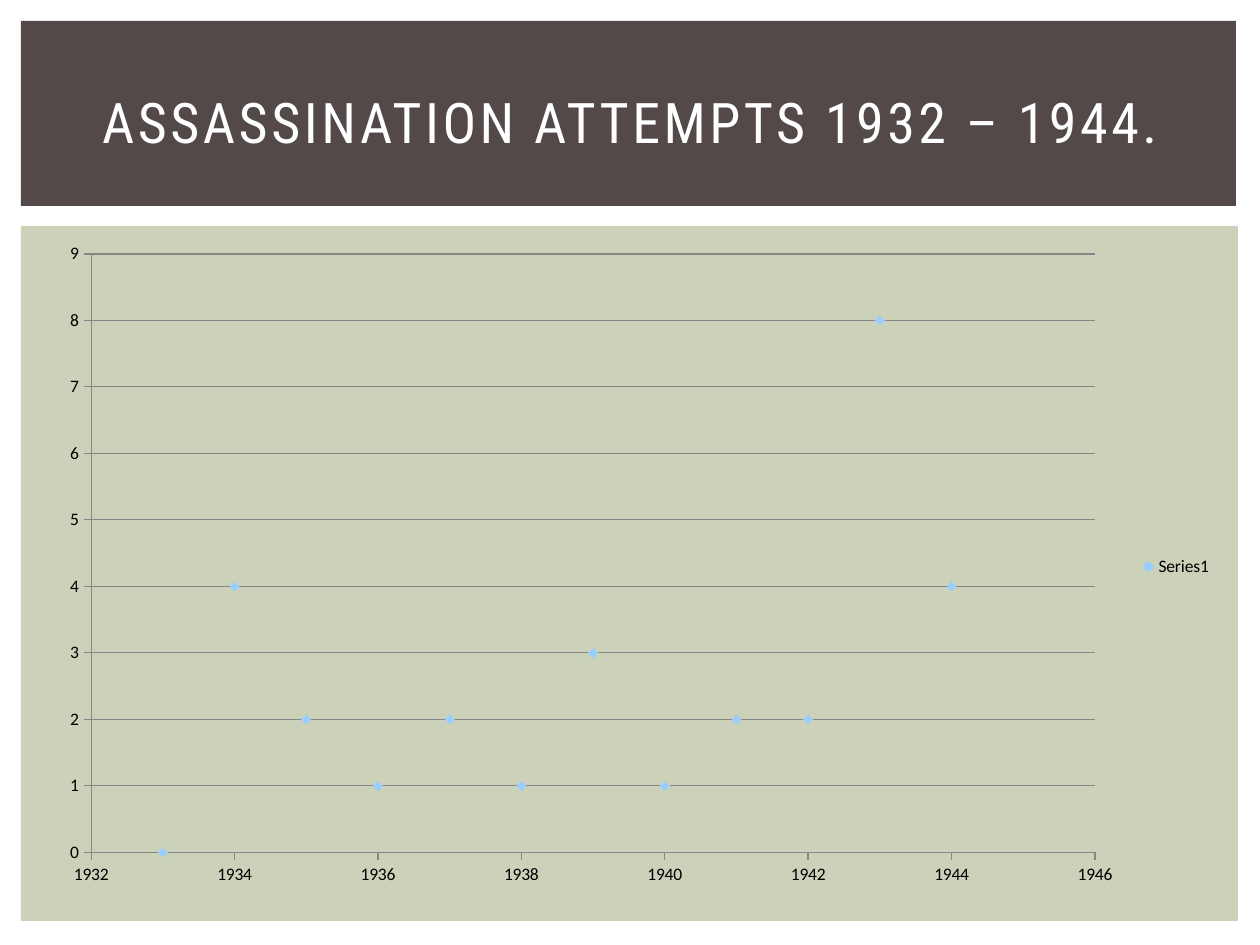
from lxml.etree import SubElement
from pptx import Presentation
from pptx.chart.data import XyChartData
from pptx.dml.color import RGBColor
from pptx.enum.chart import XL_CHART_TYPE as ChartType
from pptx.enum.chart import XL_LEGEND_POSITION as LegendPosition
from pptx.enum.chart import XL_MARKER_STYLE as MarkerStyle
from pptx.enum.chart import XL_TICK_MARK as TickMark
from pptx.enum.shapes import MSO_SHAPE as Shape
from pptx.enum.text import MSO_ANCHOR as Anchor
from pptx.enum.text import PP_ALIGN as Align
from pptx.oxml.ns import qn
from pptx.util import Emu, Pt

PX = 914400 // 126
FIRST_YEAR = 1933
ATTEMPTS = [0, 4, 2, 1, 2, 1, 3, 1, 2, 2, 8, 4]
GREY = "868686"
MARKER_BLUE = "99CCFF"


def px(*lengths):
    return [Emu(length * PX) for length in lengths]


def color(value):
    return RGBColor.from_string(value)


def add_panel(page, area, fill):
    panel = page.shapes.add_shape(Shape.RECTANGLE, *px(*area))
    panel.shadow.inherit = False
    panel.fill.solid()
    panel.fill.fore_color.rgb = color(fill)
    panel.line.fill.background()


def add_text(page, area, text, *, font, size, ink, spacing=0, align=Align.CENTER):
    """Spacing between letters is in points."""
    box = page.shapes.add_textbox(*px(*area))
    frame = box.text_frame
    frame.word_wrap = True
    frame.vertical_anchor = Anchor.MIDDLE
    para = frame.paragraphs[0]
    para.alignment = align
    span = para.add_run()
    span.text = text
    span.font.name = font
    span.font.size = Pt(size)
    span.font.color.rgb = color(ink)
    span.font._element.set("spc", str(spacing * 100))


def style_axis(axis, low, high, step):
    axis.minimum_scale, axis.maximum_scale, axis.major_unit = low, high, step
    axis.major_tick_mark = TickMark.OUTSIDE
    axis.minor_tick_mark = TickMark.NONE
    axis.format.line.color.rgb = color(GREY)
    axis.format.line.width = Pt(0.75)
    axis.tick_labels.number_format = "General"
    axis.tick_labels.number_format_is_linked = False


def place_plot(chart, **fractions):
    """Fix the inner plot area as fractions of the chart."""
    plot_area = chart._chartSpace.chart.plotArea
    layout = plot_area.find(qn("c:layout"))
    if layout is None:
        layout = SubElement(plot_area, qn("c:layout"))
        plot_area.insert(0, layout)
    manual = SubElement(layout, qn("c:manualLayout"))
    settings = {"layoutTarget": "inner", "xMode": "edge", "yMode": "edge", **fractions}
    for name, value in settings.items():
        SubElement(manual, qn(f"c:{name}")).set("val", str(value))


def add_scatter(page, area):
    data = XyChartData()
    points = data.add_series("Series1")
    for year, count in enumerate(ATTEMPTS, FIRST_YEAR):
        points.add_data_point(year, count)
    chart = page.shapes.add_chart(ChartType.XY_SCATTER, *px(*area), data).chart
    chart.has_title = False
    chart.font.name = "Calibri"
    chart.font.size = Pt(10)
    chart.font.color.rgb = color("000000")
    chart.has_legend = True
    chart.legend.position = LegendPosition.RIGHT
    chart.legend.include_in_layout = False

    style_axis(chart.category_axis, 1932, 1946, 2)
    style_axis(chart.value_axis, 0, 9, 1)
    chart.category_axis.has_major_gridlines = False
    chart.value_axis.has_major_gridlines = True
    grid = chart.value_axis.major_gridlines.format.line
    grid.color.rgb = color(GREY)
    grid.width = Pt(0.75)

    chart.plots[0].vary_by_categories = False
    series = chart.plots[0].series[0]
    series.smooth = False
    series.format.line.fill.background()
    marker = series.marker
    marker.style = MarkerStyle.DIAMOND
    marker.size = 5
    marker.format.fill.solid()
    marker.format.fill.fore_color.rgb = color(MARKER_BLUE)
    marker.format.line.color.rgb = color(MARKER_BLUE)
    place_plot(chart, x=0.04, y=0.03, w=0.85, h=0.9)


def main():
    deck = Presentation()
    deck.slide_width, deck.slide_height = px(1260, 945)
    page = deck.slides.add_slide(deck.slide_layouts[6])
    add_panel(page, (21, 226, 1217, 695), "CCD1B9")
    add_panel(page, (21, 21, 1215, 185), "534949")
    add_text(page, (53, 49, 1155, 145), "ASSASSINATION ATTEMPTS 1932 – 1944.",
             font="Roboto Condensed", size=32, ink="FFFFFF", spacing=2)
    add_scatter(page, (44, 234, 1181, 665))
    deck.save("out.pptx")


if __name__ == "__main__":
    main()
